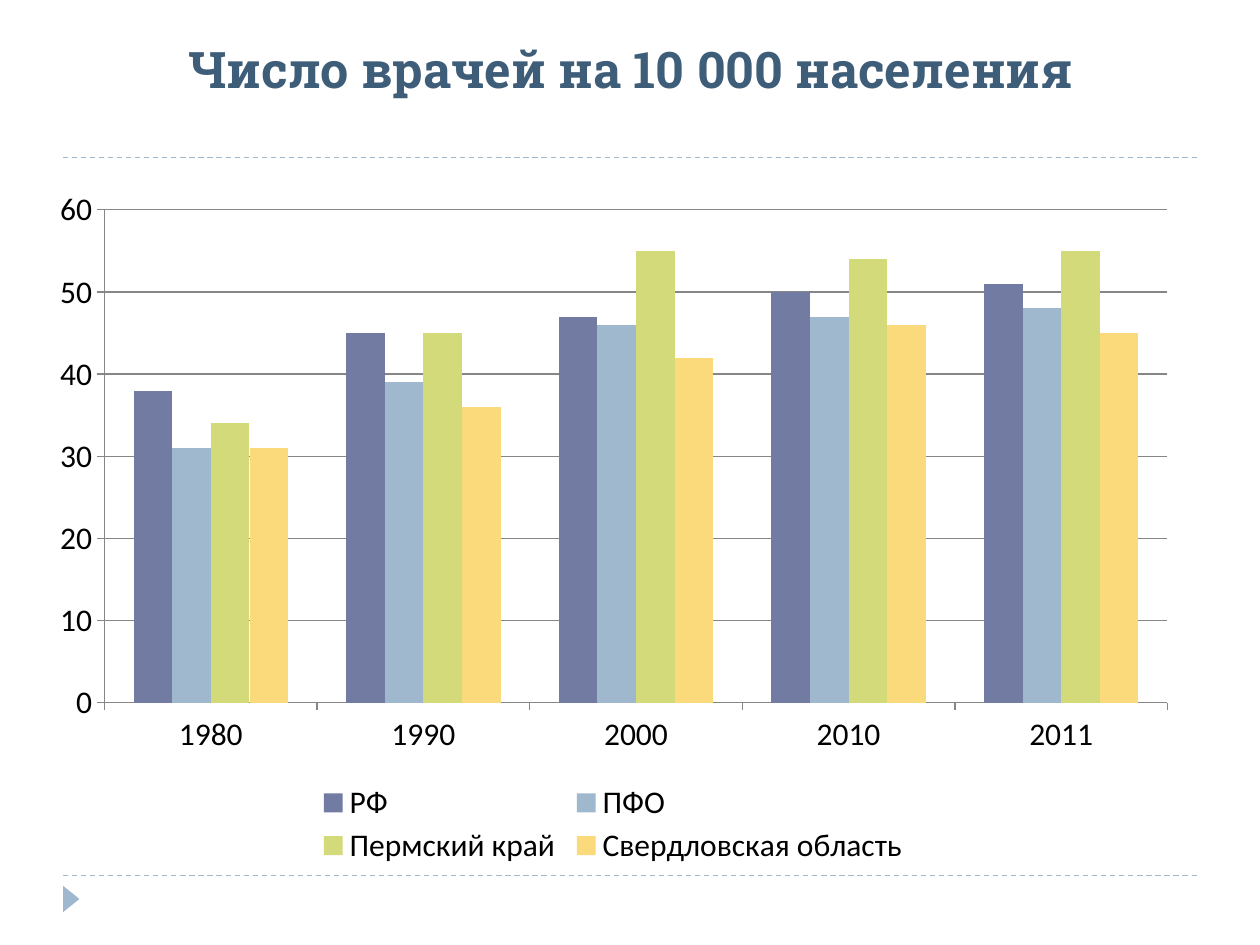
from lxml.etree import SubElement
from pptx import Presentation
from pptx.chart.data import CategoryChartData
from pptx.dml.color import RGBColor
from pptx.enum.chart import XL_CHART_TYPE, XL_LEGEND_POSITION, XL_TICK_MARK
from pptx.enum.dml import MSO_LINE
from pptx.enum.shapes import MSO_CONNECTOR, MSO_SHAPE
from pptx.enum.text import MSO_ANCHOR, PP_ALIGN
from pptx.oxml import parse_xml
from pptx.oxml.ns import nsdecls, qn
from pptx.util import Inches, Pt

BLUE = "9FB8CD"
GREY = "868686"
YEARS = ["1980", "1990", "2000", "2010", "2011"]
SERIES = [
    ("РФ", (38, 45, 47, 50, 51), "727CA3"),
    ("ПФО", (31, 39, 46, 47, 48), BLUE),
    ("Пермский край", (34, 45, 55, 54, 55), "D2DA7A"),
    ("Свердловская область", (31, 36, 42, 46, 45), "FADA7A"),
]


def color(code):
    return RGBColor.from_string(code)


def add_text(slide, text, box, *, size, font, code, bold=False):
    shape = slide.shapes.add_textbox(*map(Inches, box))
    frame = shape.text_frame
    frame.word_wrap = True
    frame.vertical_anchor = MSO_ANCHOR.BOTTOM
    frame.margin_top = frame.margin_bottom = 0
    para = frame.paragraphs[0]
    para.alignment = PP_ALIGN.CENTER
    run = para.add_run()
    run.text = text
    run.font.size, run.font.name, run.font.bold = Pt(size), font, bold
    run.font.color.rgb = color(code)


def add_rule(slide, y):
    rule = slide.shapes.add_connector(
        MSO_CONNECTOR.STRAIGHT, Inches(0.5), Inches(y), Inches(9.5), Inches(y))
    rule.line.color.rgb = color(BLUE)
    rule.line.width = Pt(0.75)
    rule.line.dash_style = MSO_LINE.DASH
    SubElement(rule.element.spPr, qn("a:effectLst"))


def add_marker(slide, box):
    mark = slide.shapes.add_shape(
        MSO_SHAPE.ISOSCELES_TRIANGLE, *map(Inches, box))
    mark.rotation = 90
    mark.shadow.inherit = False
    mark.fill.solid()
    mark.fill.fore_color.rgb = color(BLUE)
    mark.line.fill.background()


def make_layout(x, y, w, h, inner=False):
    """Manual layout, as fractions of the chart's size."""
    target = '<c:layoutTarget val="inner"/>' if inner else ""
    return parse_xml(
        f'<c:layout {nsdecls("c")}><c:manualLayout>{target}'
        '<c:xMode val="edge"/><c:yMode val="edge"/>'
        f'<c:x val="{x}"/><c:y val="{y}"/><c:w val="{w}"/><c:h val="{h}"/>'
        '</c:manualLayout></c:layout>')


def set_layout(chart):
    root = chart.element.find(qn("c:chart"))
    area = root.find(qn("c:plotArea"))
    for old in area.findall(qn("c:layout")):
        area.remove(old)
    area.insert(0, make_layout(0.06, 0.05, 0.92, 0.71, inner=True))
    legend = root.find(qn("c:legend"))
    for old in legend.findall(qn("c:layout")):
        legend.remove(old)
    legend.find(qn("c:legendPos")).addnext(make_layout(0.24, 0.87, 0.52, 0.13))


def add_chart(slide, box):
    data = CategoryChartData()
    data.categories = YEARS
    for name, vals, _ in SERIES:
        data.add_series(name, vals)
    chart = slide.shapes.add_chart(
        XL_CHART_TYPE.COLUMN_CLUSTERED, *map(Inches, box), data).chart
    chart.has_title = False
    chart.font.size, chart.font.name = Pt(18), "Calibri"
    chart.font.color.rgb = color("000000")

    # Columns
    plot = chart.plots[0]
    plot.gap_width, plot.overlap = 150, 0
    plot.vary_by_categories = False
    for series, (_, _, code) in zip(plot.series, SERIES):
        series.format.fill.solid()
        series.format.fill.fore_color.rgb = color(code)

    # Axes
    scale = chart.value_axis
    scale.minimum_scale, scale.maximum_scale, scale.major_unit = 0, 60, 10
    scale.has_major_gridlines = True
    lines = [scale.major_gridlines.format.line]
    for axis in (chart.category_axis, scale):
        axis.major_tick_mark = XL_TICK_MARK.OUTSIDE
        axis.minor_tick_mark = XL_TICK_MARK.NONE
        lines.append(axis.format.line)
    for line in lines:
        line.color.rgb = color(GREY)
        line.width = Pt(0.75)

    # Legend
    chart.has_legend = True
    chart.legend.position = XL_LEGEND_POSITION.BOTTOM
    chart.legend.include_in_layout = False
    set_layout(chart)


def main():
    deck = Presentation()
    deck.slide_width, deck.slide_height = Inches(10), Inches(7.5)
    slide = deck.slides.add_slide(deck.slide_layouts[6])

    # Frame
    for y in (6.95, 1.25):
        add_rule(slide, y)
    add_marker(slide, (0.46, 7.07, 0.21, 0.13))

    # Content
    add_text(slide, "Число врачей на 10 000 населения", (0.51, 0.21, 9, 0.57),
             size=28.8, font="Roboto Slab", code="3E5D78", bold=True)
    add_chart(slide, (0.28, 1.39, 9.17, 5.51))
    deck.save("out.pptx")


if __name__ == "__main__":
    main()
